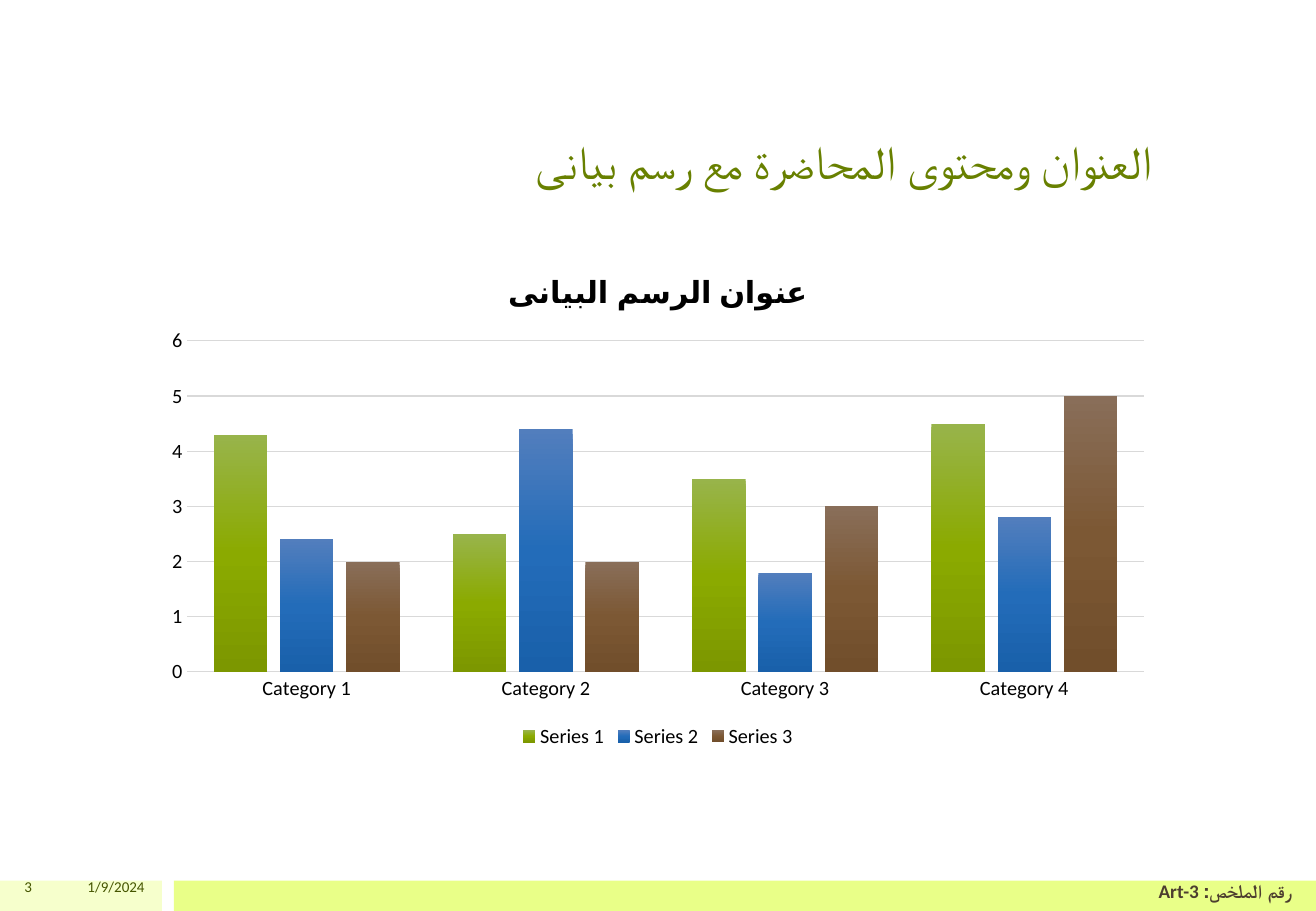
from copy import deepcopy
from dataclasses import dataclass

from pptx import Presentation
from pptx.chart.data import CategoryChartData
from pptx.dml.color import RGBColor
from pptx.enum.chart import XL_CHART_TYPE, XL_LEGEND_POSITION, XL_TICK_MARK
from pptx.enum.shapes import MSO_SHAPE
from pptx.enum.text import MSO_ANCHOR, MSO_AUTO_SIZE, PP_ALIGN
from pptx.oxml.ns import qn
from pptx.slide import Slide
from pptx.text.text import Font
from pptx.util import Pt


@dataclass(frozen=True)
class Theme:
    face: str = "Calibri"
    title: str = "688000"
    foot: str = "455500"
    code: str = "4D3E2F"
    ink: str = "000000"
    grid: str = "D9D9D9"
    pale: str = "F6FFCC"
    lime: str = "E9FF88"
    title_size: float = 27.6
    head_size: float = 18
    axis_size: float = 12
    code_size: float = 11.4
    foot_size: float = 8.9


@dataclass(frozen=True)
class Box:
    left: float
    top: float
    width: float
    height: float

    def place(self) -> tuple[Pt, Pt, Pt, Pt]:
        return Pt(self.left), Pt(self.top), Pt(self.width), Pt(self.height)


@dataclass(frozen=True)
class Band:
    box: Box
    fill: str


@dataclass(frozen=True)
class Label:
    text: str
    box: Box
    size: float
    color: str
    anchor: MSO_ANCHOR = MSO_ANCHOR.MIDDLE
    bold: bool = False
    rtl: bool = False
    tight: bool = False
    after: float = 0


@dataclass(frozen=True)
class Series:
    name: str
    values: tuple[float, ...]
    shades: tuple[str, str, str]


THEME = Theme()
BANDS = (
    Band(Box(0, 522, 96, 18), THEME.pale),
    Band(Box(103, 522, 677, 18), THEME.lime),
)
LABELS = (
    Label("3", Box(0, 518.4, 26, 14.4), THEME.foot_size, THEME.foot, after=4.9),
    Label("1/9/2024", Box(28.8, 518.4, 64, 14.4), THEME.foot_size, THEME.foot, after=4.9),
    Label("رقم الملخص: Art-3", Box(604, 521.3, 161.3, 13.7), THEME.code_size,
          THEME.code, MSO_ANCHOR.TOP, bold=True, rtl=True, tight=True),
    Label("العنوان ومحتوى المحاضرة مع رسم بيانى", Box(90, 68.4, 600, 46.8),
          THEME.title_size, THEME.title, MSO_ANCHOR.BOTTOM, rtl=True),
)
PLOT = Box(90, 150.5, 600, 296)
HEAD = "عنوان الرسم البيانى"
GROUPS = tuple(f"Category {n}" for n in range(1, 5))
DATA = (
    Series("Series 1", (4.3, 2.5, 3.5, 4.5), ("98B44B", "8BAA00", "7C9700")),
    Series("Series 2", (2.4, 4.4, 1.8, 2.8), ("527EBD", "236CB9", "1960AA")),
    Series("Series 3", (2, 2, 3, 5), ("896E59", "7C5834", "714E2B")),
)


def style(font: Font, size: float, color: str, bold: bool = False) -> None:
    font.name = THEME.face
    font.size = Pt(size)
    font.bold = bold
    font.color.rgb = RGBColor.from_string(color)


def draw_band(slide: Slide, band: Band) -> None:
    shape = slide.shapes.add_shape(MSO_SHAPE.RECTANGLE, *band.box.place())
    shape.shadow.inherit = False
    shape.fill.solid()
    shape.fill.fore_color.rgb = RGBColor.from_string(band.fill)
    shape.line.fill.background()


def draw_label(slide: Slide, label: Label) -> None:
    frame = slide.shapes.add_textbox(*label.box.place()).text_frame
    frame.text = label.text
    frame.word_wrap = True
    frame.vertical_anchor = label.anchor
    if label.tight:
        frame.margin_left = frame.margin_right = Pt(0)
        frame.margin_top = frame.margin_bottom = Pt(0)
        frame.auto_size = MSO_AUTO_SIZE.SHAPE_TO_FIT_TEXT
    line = frame.paragraphs[0]
    line.alignment = PP_ALIGN.RIGHT
    line.space_after = Pt(label.after)
    if label.rtl:
        line._p.get_or_add_pPr().set("rtl", "1")
    style(line.runs[0].font, label.size, label.color, label.bold)


def draw_chart(slide: Slide) -> None:
    data = CategoryChartData()
    data.categories = GROUPS
    for item in DATA:
        data.add_series(item.name, item.values)
    chart = slide.shapes.add_chart(
        XL_CHART_TYPE.COLUMN_CLUSTERED, *PLOT.place(), data).chart
    style(chart.font, THEME.axis_size, THEME.ink)

    chart.has_title = True
    frame = chart.chart_title.text_frame
    frame.text = HEAD
    chart.chart_title.include_in_layout = False
    line = frame.paragraphs[0]
    line._p.get_or_add_pPr().set("rtl", "1")
    style(line.runs[0].font, THEME.head_size, THEME.ink, True)

    chart.has_legend = True
    chart.legend.position = XL_LEGEND_POSITION.BOTTOM
    chart.legend.include_in_layout = False
    style(chart.legend.font, THEME.axis_size, THEME.ink)

    scale = chart.value_axis
    scale.minimum_scale, scale.maximum_scale, scale.major_unit = 0, 6, 1
    for axis in (chart.category_axis, scale):
        axis.major_tick_mark = axis.minor_tick_mark = XL_TICK_MARK.NONE
        style(axis.tick_labels.font, THEME.axis_size, THEME.ink)
    scale.format.line.fill.background()
    for rule in (chart.category_axis.format.line, scale.major_gridlines.format.line):
        rule.color.rgb = RGBColor.from_string(THEME.grid)
        rule.width = Pt(0.75)

    plot = chart.plots[0]
    plot.gap_width = 100
    plot.overlap = -24
    plot.vary_by_categories = False
    for bars, item in zip(plot.series, DATA):
        fill = bars.format.fill
        fill.gradient()
        fill.gradient_angle = 270
        stops = next(bars._element.iter(qn("a:gsLst")))
        stops.append(deepcopy(stops[0]))
        for stop, shade, point in zip(fill.gradient_stops, item.shades, (0, 0.5, 1)):
            stop.color.rgb = RGBColor.from_string(shade)
            stop.position = point


def main() -> None:
    deck = Presentation()
    deck.slide_width, deck.slide_height = Pt(780), Pt(540)
    slide = deck.slides.add_slide(deck.slide_layouts[6])
    for band in BANDS:
        draw_band(slide, band)
    draw_chart(slide)
    for label in LABELS:
        draw_label(slide, label)
    deck.save("out.pptx")


if __name__ == "__main__":
    main()
